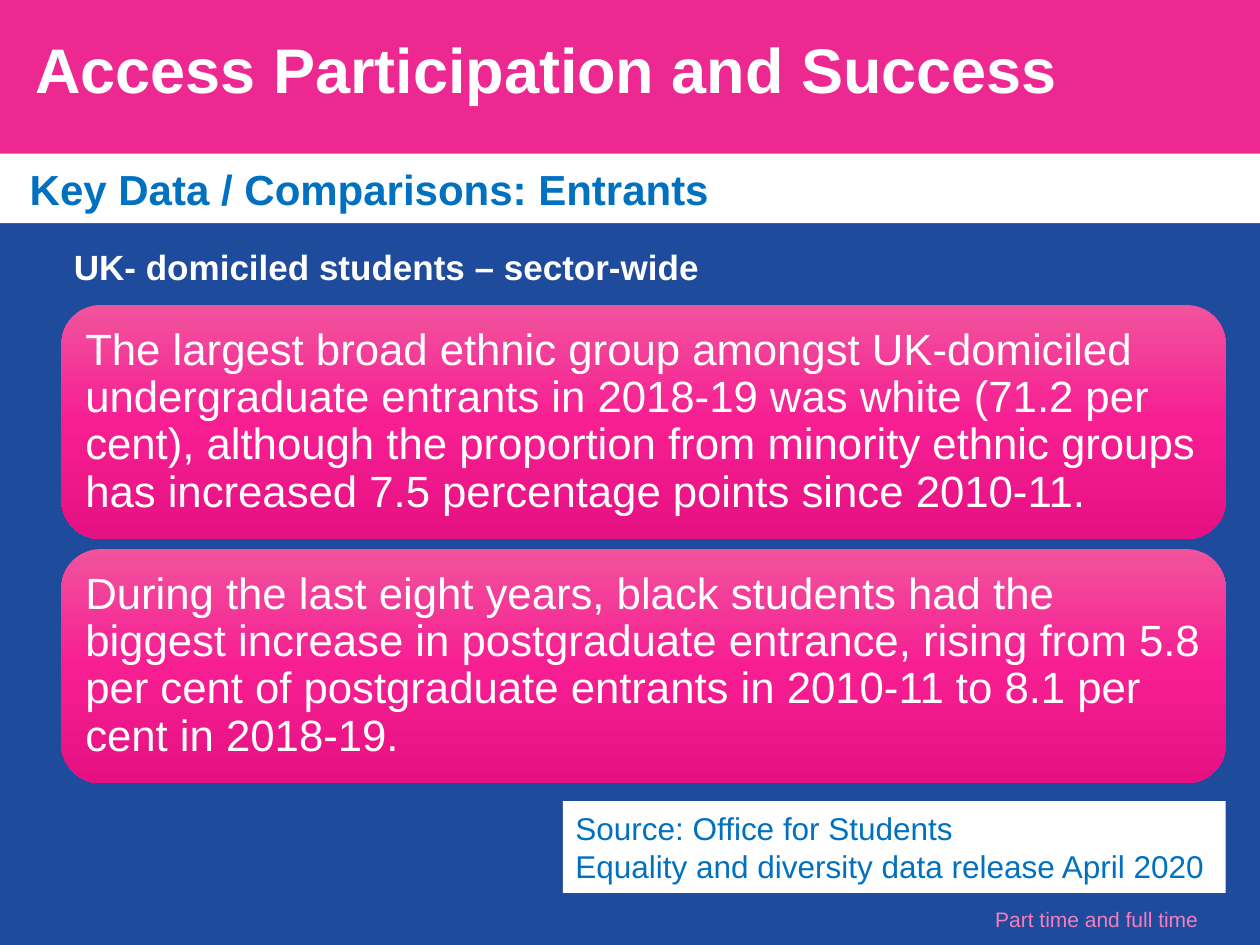
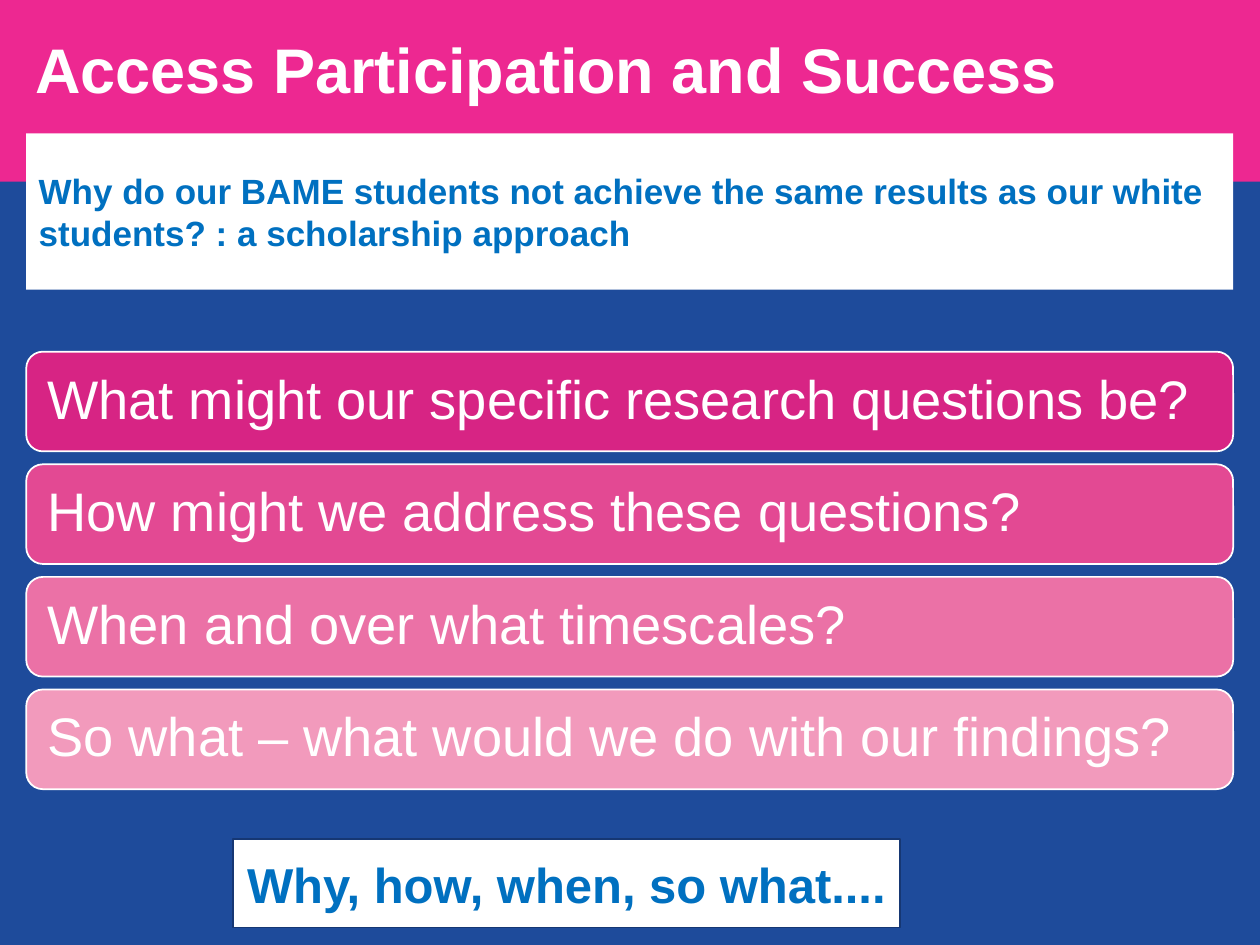
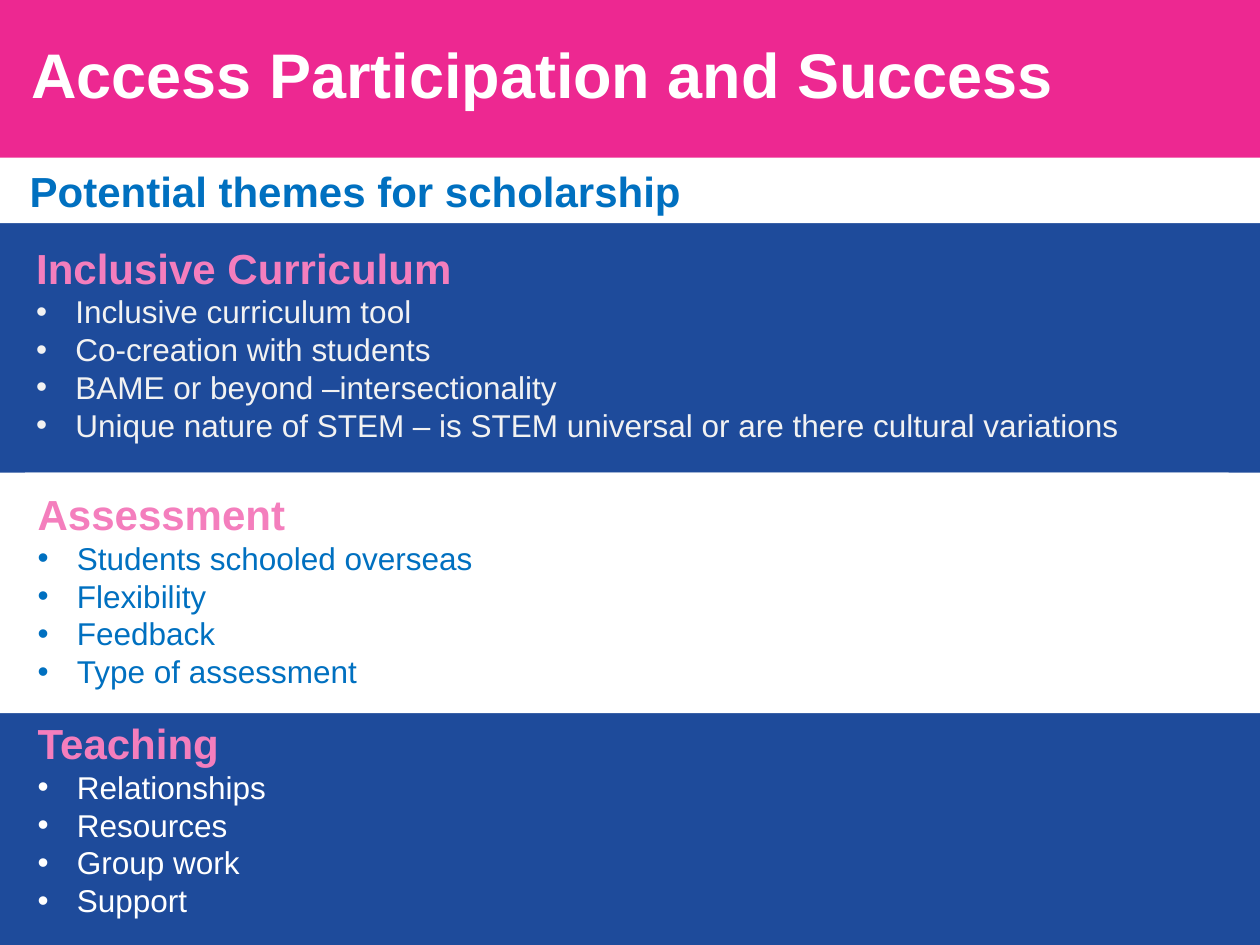
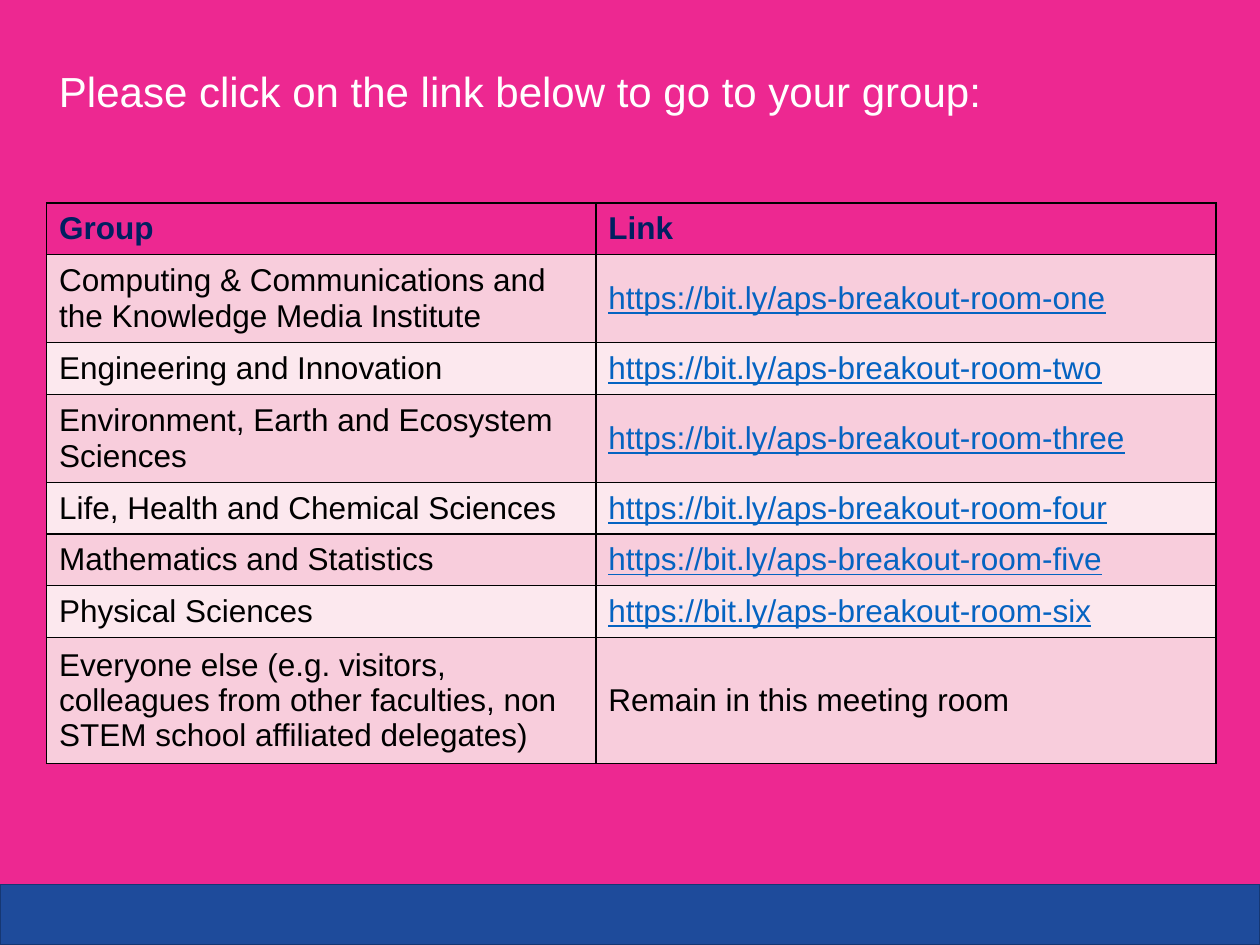
import copy
import pptx
import pptx.util
import pptx.dml.color
import pptx.enum.shapes
import pptx.enum.text
import pptx.oxml
import pptx.oxml.ns

Cm = pptx.util.Cm
Pt = pptx.util.Pt
qn = pptx.oxml.ns.qn
rgb = pptx.dml.color.RGBColor.from_string
RECT = pptx.enum.shapes.MSO_SHAPE.RECTANGLE
ROUND = pptx.enum.shapes.MSO_SHAPE.ROUNDED_RECTANGLE
TOP = pptx.enum.text.MSO_ANCHOR.TOP
MIDDLE = pptx.enum.text.MSO_ANCHOR.MIDDLE
LEFT = pptx.enum.text.PP_ALIGN.LEFT
CENTER = pptx.enum.text.PP_ALIGN.CENTER

PINK, NAVY, WHITE, BLUE, ROSE = "ED2891", "1E4B9B", "FFFFFF", "0070C0", "F47EBD"
EDGE = "163773"
FONT = "Arial"
PAGE_W, PAGE_H = 25.4, 19.05
TITLE = "Access Participation and Success"
NS = 'xmlns:a="http://schemas.openxmlformats.org/drawingml/2006/main"'


def add_box(s, x, y, w, h, fill=None, line=None, shape=RECT):
    if fill is None:
        return s.shapes.add_textbox(Cm(x), Cm(y), Cm(w), Cm(h))
    sp = s.shapes.add_shape(shape, Cm(x), Cm(y), Cm(w), Cm(h))
    sp.shadow.inherit = False
    sp.fill.solid()
    sp.fill.fore_color.rgb = rgb(fill)
    if line:
        sp.line.color.rgb = rgb(line)
        sp.line.width = Pt(1)
    else:
        sp.line.fill.background()
    return sp


def write(tf, lines, size, color, bold=False, align=LEFT, anchor=MIDDLE,
          inset=(0.25, 0.13, 0.25, 0.13), spacing=None, bullets=None):
    tf.word_wrap = True
    tf.vertical_anchor = anchor
    tf.margin_left, tf.margin_top, tf.margin_right, tf.margin_bottom = map(Cm, inset)
    styled = [(text, size, color, bold, False) for text in lines]
    styled += [(text, 18, bullets[1], False, True) for text in bullets[0]] if bullets else []
    for i, (text, pts, hue, heavy, bulleted) in enumerate(styled):
        p = tf.add_paragraph() if i else tf.paragraphs[0]
        p.alignment = align
        if spacing:
            p.line_spacing = spacing
        if bulleted:
            pPr = p._p.get_or_add_pPr()
            pPr.set("marL", str(Cm(0.79)))
            pPr.set("indent", str(Cm(-0.79)))
            pPr.append(pptx.oxml.parse_xml(f'<a:buFont {NS} typeface="{FONT}"/>'))
            pPr.append(pptx.oxml.parse_xml(f'<a:buChar {NS} char="•"/>'))
        r = p.add_run()
        r.text = text
        r.font.name = FONT
        r.font.size = Pt(pts)
        r.font.bold = heavy
        r.font.color.rgb = rgb(hue)


prs = pptx.Presentation()
prs.slide_width, prs.slide_height = Cm(PAGE_W), Cm(PAGE_H)

headers = [
    (4.09, (0.71, 0.79, 24.33, 2.62), (0, 0, 0, 0)),
    (3.66, (0.71, 0.79, 24.33, 1.6), (0, 0, 0, 0)),
    (4.09, (0, 0, PAGE_W, 3.84), (0.63, 0.89, 0, 0)),
    None,
]
slides = []
for header in headers:
    s = prs.slides.add_slide(prs.slide_layouts[6])
    s.background.fill.solid()
    s.background.fill.fore_color.rgb = rgb(PINK)
    if header:
        body_top, title_box, title_inset = header
        add_box(s, 0, body_top, PAGE_W, PAGE_H - body_top, NAVY)
        sp = add_box(s, *title_box)
        write(sp.text_frame, [TITLE], 36, WHITE, True, anchor=TOP, inset=title_inset, spacing=0.9)
    slides.append(s)
entrants, questions, themes, groups = slides

for s, y, h, text in [
    (entrants, 3.1, 1.4, "Key Data / Comparisons: Entrants"),
    (themes, 3.18, 1.32, "Potential themes for scholarship"),
]:
    sp = add_box(s, 0, y, PAGE_W, h, WHITE)
    write(sp.text_frame, [text], 24, BLUE, True, inset=(0.6, 0.13, 0.25, 0.13))

findings = [
    "The largest broad ethnic group amongst UK-domiciled undergraduate entrants in 2018-19 was white (71.2 per cent), although the proportion from minority ethnic groups has increased 7.5 percentage points since 2010-11.",
    "During the last eight years, black students had the biggest increase in postgraduate entrance, rising from 5.8 per cent of postgraduate entrants in 2010-11 to 8.1 per cent in 2018-19.",
]
for i, text in enumerate(findings):
    sp = add_box(entrants, 1.24, 6.15 + i * 4.92, 23.47, 4.72, PINK, shape=ROUND)
    sp.fill.gradient()
    sp.fill.gradient_angle = 270
    gs_lst = sp._element.spPr.find(".//" + qn("a:gsLst"))
    gs_lst.insert(1, copy.deepcopy(gs_lst[0]))
    for stop, position, color in zip(sp.fill.gradient_stops, (0, 0.5, 1), ("F1539D", "F71E92", "E51182")):
        stop.position = position
        stop.color.rgb = rgb(color)
    write(sp.text_frame, [text], 25, WHITE, inset=(0.25,) * 4, spacing=0.9)

sp = add_box(entrants, 11.35, 16.15, 13.36, 1.85, WHITE)
write(sp.text_frame, ["Source: Office for Students", "Equality and diversity data release April 2020"], 18, BLUE)
sp = add_box(entrants, 1.24, 5, 14.63, 0.76, NAVY)
write(sp.text_frame, ["UK- domiciled students – sector-wide"], 20, WHITE, True)
sp = add_box(entrants, 19.53, 18.24, 5.16, 0.58, NAVY)
write(sp.text_frame, ["Part time and full time"], 12, ROSE, align=CENTER)

sp = add_box(questions, 0.53, 2.69, 24.33, 3.15, WHITE)
write(sp.text_frame, ["Why do our BAME students not achieve the same results as our white students? : a scholarship approach"], 20, BLUE, True)
prompts = [
    ("What might our specific research questions be?", "D72484"),
    ("How might we address these questions?", "E34993"),
    ("When and over what timescales?", "EB71A6"),
    ("So what – what would we do with our findings?", "F29ABC"),
]
for i, (text, fill) in enumerate(prompts):
    sp = add_box(questions, 0.53, 7.09 + i * 2.27, 24.33, 2.01, fill, WHITE, ROUND)
    write(sp.text_frame, [text], 31, WHITE, inset=(0.33,) * 4, spacing=0.9)
sp = add_box(questions, 4.7, 16.92, 13.44, 1.78, WHITE, EDGE)
write(sp.text_frame, ["Why, how, when, so what...."], 28, BLUE, True, CENTER)

sp = add_box(themes, 0.48, 4.75, 24.71, 4.37)
write(sp.text_frame, ["Inclusive Curriculum"], 24, ROSE, True, anchor=TOP, bullets=([
    "Inclusive curriculum tool",
    "Co-creation with students",
    "BAME or beyond –intersectionality",
    "Unique nature of STEM – is STEM universal or are there cultural variations",
], "F2F2F2"))
add_box(themes, 0, 9.53, PAGE_W, 4.85, WHITE)
sp = add_box(themes, 0.51, 14.73, 24.79, 4.32, NAVY)
write(sp.text_frame, ["Teaching"], 24, ROSE, True, inset=(0.25, 0, 0.25, 0.79),
      bullets=(["Relationships", "Resources", "Group work", "Support"], WHITE))
sp = add_box(themes, 0.51, 9.53, 24.26, 4.7, WHITE)
write(sp.text_frame, ["Assessment"], 24, ROSE, True,
      bullets=(["Students schooled overseas", "Flexibility", "Feedback", "Type of assessment"], BLUE))

sp = add_box(groups, 0.94, 0.43, 20.96, 2.79)
write(sp.text_frame, ["Please click on the link below to go to your group:"], 24, WHITE)
add_box(groups, 0, 17.83, PAGE_W, 1.22, NAVY, EDGE)

rows = [
    ("Group", "Link"),
    ("Computing & Communications and the Knowledge Media Institute", "https://bit.ly/aps-breakout-room-one"),
    ("Engineering and Innovation", "https://bit.ly/aps-breakout-room-two"),
    ("Environment, Earth and Ecosystem Sciences", "https://bit.ly/aps-breakout-room-three"),
    ("Life, Health and Chemical Sciences", "https://bit.ly/aps-breakout-room-four"),
    ("Mathematics and Statistics", "https://bit.ly/aps-breakout-room-five"),
    ("Physical Sciences", "https://bit.ly/aps-breakout-room-six"),
    ("Everyone else (e.g. visitors, colleagues from other faculties, non STEM school affiliated delegates)", "Remain in this meeting room"),
]
table = groups.shapes.add_table(len(rows), 2, Cm(0.94), Cm(4.09), Cm(23.57), Cm(8.32)).table
table.columns[0].width, table.columns[1].width = Cm(11.07), Cm(12.5)
for i, row in enumerate(rows):
    table.rows[i].height = Cm(1.04)
    for j, text in enumerate(row):
        cell = table.cell(i, j)
        is_link = text.startswith("https")
        color = "002060" if i == 0 else "0563C1" if is_link else "000000"
        write(cell.text_frame, [text], 18, color, bold=i == 0)
        cell.vertical_anchor = MIDDLE
        if is_link:
            cell.text_frame.paragraphs[0].runs[0].font.underline = True
        tcPr = cell._tc.get_or_add_tcPr()
        for side in "LRTB":
            tcPr.append(pptx.oxml.parse_xml(
                f'<a:ln{side} {NS} w="12700"><a:solidFill><a:srgbClr val="000000"/></a:solidFill></a:ln{side}>'))
        cell.fill.solid()
        cell.fill.fore_color.rgb = rgb(PINK if i == 0 else "F8CDDC" if i % 2 else "FCE8EE")

prs.save("out.pptx")
